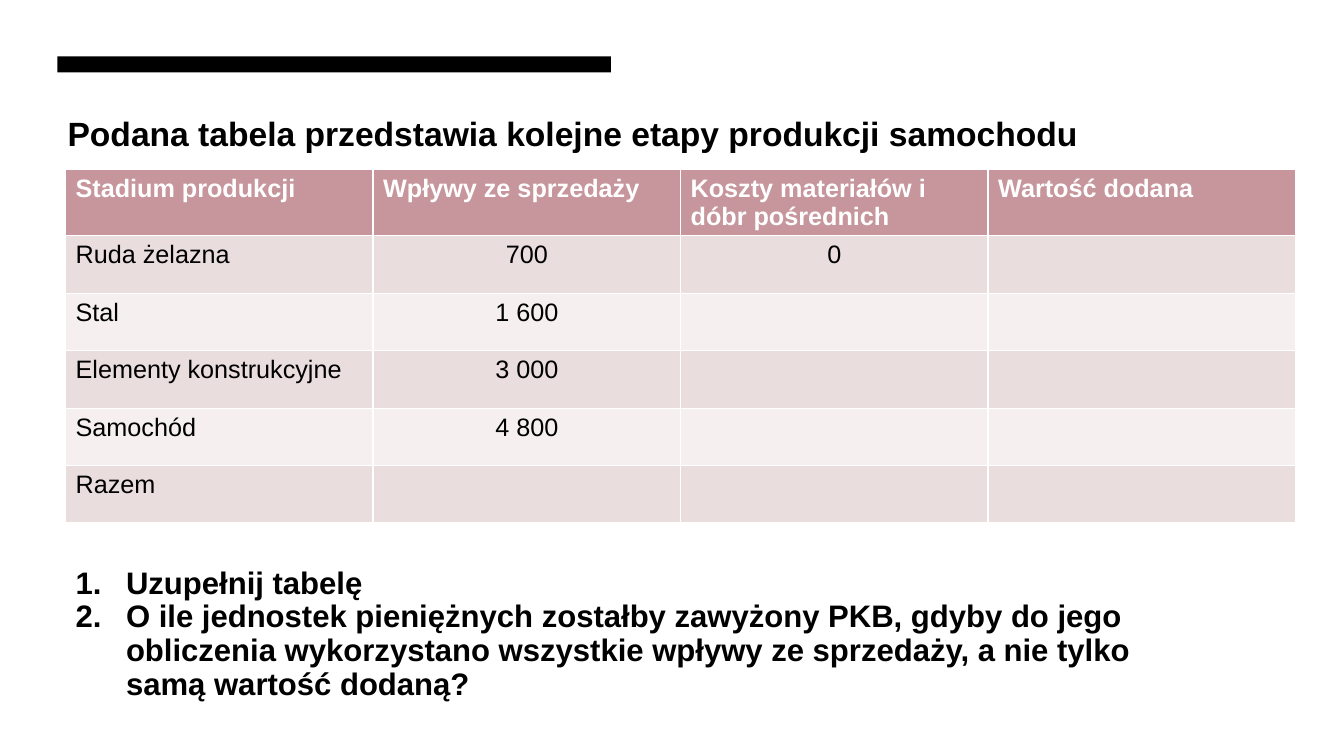
from lxml.etree import SubElement
from pptx import Presentation
from pptx.dml.color import RGBColor
from pptx.enum.shapes import MSO_SHAPE
from pptx.enum.text import MSO_ANCHOR, MSO_AUTO_SIZE, PP_ALIGN
from pptx.oxml.ns import qn
from pptx.util import Inches, Pt

TITLE = "Podana tabela przedstawia kolejne etapy produkcji samochodu"
ROWS = [
    ("Stadium produkcji", "Wpływy ze sprzedaży", "Koszty materiałów i dóbr pośrednich", "Wartość dodana"),
    ("Ruda żelazna", "700", "0", ""),
    ("Stal", "1 600", "", ""),
    ("Elementy konstrukcyjne", "3 000", "", ""),
    ("Samochód", "4 800", "", ""),
    ("Razem", "", "", ""),
]
TASKS = [
    "Uzupełnij tabelę",
    "O ile jednostek pieniężnych zostałby zawyżony PKB, gdyby do jego obliczenia "
    "wykorzystano wszystkie wpływy ze sprzedaży, a nie tylko samą wartość dodaną?",
]
BLACK, WHITE = "000000", "FFFFFF"
HEADER_FILL, BAND_FILLS = "C6969C", ("F5EFEF", "EADDDE")
COL_W, ROW_H = 3.05, 0.57


def color(value):
    return RGBColor.from_string(value)


def write(p, text, size=18, bold=False, fill=BLACK, align=PP_ALIGN.LEFT):
    p.alignment = align
    r = p.add_run()
    r.text = text
    r.font.name = "Arial"
    r.font.size = Pt(size)
    r.font.bold = bold
    r.font.color.rgb = color(fill)


def place(s, left, top, width, height):
    """Move a placeholder and give it a plain, top-anchored text frame."""
    s.left, s.top, s.width, s.height = map(Inches, (left, top, width, height))
    tf = s.text_frame
    tf.word_wrap = True
    tf.auto_size = MSO_AUTO_SIZE.NONE
    tf.vertical_anchor = MSO_ANCHOR.TOP
    return tf


def number(p, indent):
    pPr = p._p.get_or_add_pPr()
    pPr.set("marL", str(Inches(indent)))
    pPr.set("indent", str(Inches(-indent)))
    SubElement(pPr, qn("a:buFont"), typeface="+mj-lt")
    SubElement(pPr, qn("a:buAutoNum"), type="arabicPeriod")


prs = Presentation()
prs.slide_width, prs.slide_height = Inches(13.33), Inches(7.5)
slide = prs.slides.add_slide(prs.slide_layouts[1])
title, tasks = slide.placeholders

bar = slide.shapes.add_shape(MSO_SHAPE.RECTANGLE, Inches(0.57), Inches(0.56), Inches(5.49), Inches(0.16))
bar.shadow.inherit = False
bar.fill.solid()
bar.fill.fore_color.rgb = color(BLACK)
bar.line.fill.background()

write(place(title, 0.57, 1.07, 11.32, 1.19).paragraphs[0], TITLE, size=24, bold=True)

n_rows, n_cols = len(ROWS), len(ROWS[0])
table = slide.shapes.add_table(n_rows, n_cols, Inches(0.65), Inches(1.68),
                               Inches(n_cols * COL_W), Inches(n_rows * ROW_H)).table
for col in table.columns:
    col.width = Inches(COL_W)
for i, row in enumerate(ROWS):
    table.rows[i].height = Inches(ROW_H)
    header = i == 0
    for j, text in enumerate(row):
        cell = table.cell(i, j)
        cell.fill.solid()
        cell.fill.fore_color.rgb = color(HEADER_FILL if header else BAND_FILLS[i % 2])
        if text:
            write(cell.text_frame.paragraphs[0], text, bold=header, fill=WHITE if header else BLACK,
                  align=PP_ALIGN.LEFT if header or j == 0 else PP_ALIGN.CENTER)

tf = place(tasks, 0.65, 5.58, 11.41, 1.47)
for i, text in enumerate(TASKS):
    p = tf.add_paragraph() if i else tf.paragraphs[0]
    p.line_spacing = 0.9
    p.space_before = p.space_after = Pt(0)
    number(p, 0.5)
    write(p, text, size=22.2, bold=True)

prs.save("out.pptx")
